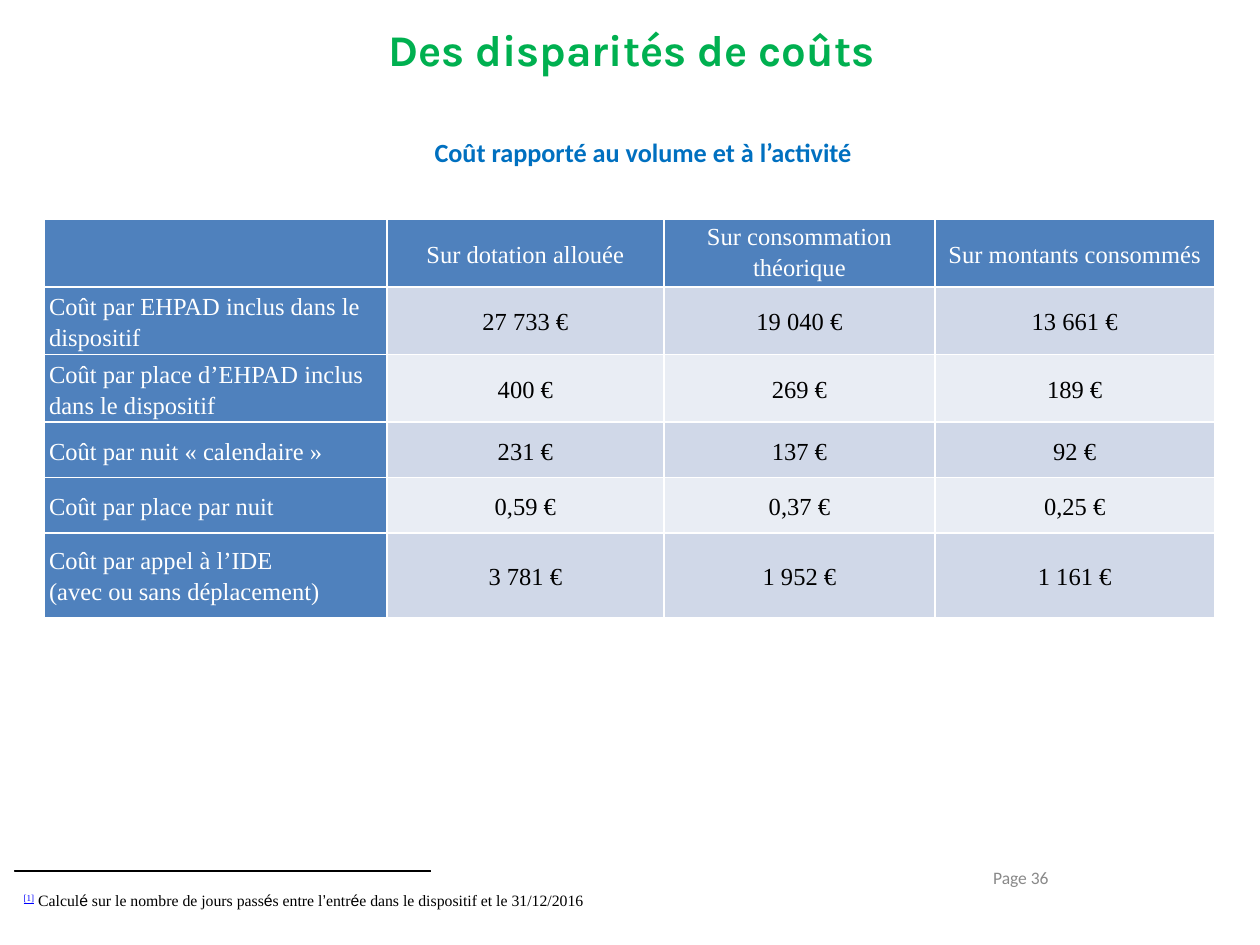
import pptx
import pptx.dml.color
import pptx.enum.shapes
import pptx.enum.text
import pptx.util

ALIGN = pptx.enum.text.PP_ALIGN
MIDDLE = pptx.enum.text.MSO_ANCHOR.MIDDLE
TOP = pptx.enum.text.MSO_ANCHOR.TOP
FIT = pptx.enum.text.MSO_AUTO_SIZE.SHAPE_TO_FIT_TEXT
COLS, ROWS = 100, 75

HEAD = ["", "Sur dotation allouée", "Sur consommation théorique", "Sur montants consommés"]
COSTS = [
    ["Coût par EHPAD inclus dans le dispositif", "27 733 €", "19 040 €", "13 661 €"],
    ["Coût par place d’EHPAD inclus dans le dispositif", "400 €", "269 €", "189 €"],
    ["Coût par nuit « calendaire »", "231 €", "137 €", "92 €"],
    ["Coût par place par nuit", "0,59 €", "0,37 €", "0,25 €"],
    ["Coût par appel à l’IDE\n(avec ou sans déplacement)", "3 781 €", "1 952 €", "1 161 €"],
]
NOTE = [" Calcul", "é", " sur le nombre de jours pass", "é", "s entre l", "’",
        "entr", "é", "e dans le dispositif et le 31/12/2016"]


def tint(code):
    return pptx.dml.color.RGBColor.from_string(code)


def apply(item, form):
    for name, value in form.items():
        setattr(item, name, value)


def style(run, color, **form):
    apply(run.font, form)
    run.font.color.rgb = tint(color)


class Page:
    """Holds the deck, its slide and the table style; lengths are grid columns and rows."""

    blue, bands, serif = "4F81BD", ("D0D8E8", "E9EDF4"), "Times New Roman"

    def __init__(self):
        self.deck = pptx.Presentation()
        apply(self.deck, {"slide_width": pptx.util.Inches(10),
                          "slide_height": pptx.util.Inches(7.5)})
        self.slide = self.deck.slides.add_slide(self.deck.slide_layouts[6])

    def wide(self, cols):
        return round(self.deck.slide_width * cols / COLS)

    def tall(self, rows):
        return round(self.deck.slide_height * rows / ROWS)

    def place(self, x, y, w, h):
        return self.wide(x), self.tall(y), self.wide(w), self.tall(h)

    def text(self, spot, words, size, color, font, align=ALIGN.LEFT, bold=False, **frame):
        box = self.slide.shapes.add_textbox(*self.place(*spot)).text_frame
        apply(box, {"word_wrap": True, **frame})
        line = box.paragraphs[0]
        line.alignment = align
        run = line.add_run()
        run.text = words
        style(run, color, size=pptx.util.Pt(size), name=font, bold=bold)

    def block(self, spot, fill, edge=None):
        rect = pptx.enum.shapes.MSO_SHAPE.RECTANGLE
        shape = self.slide.shapes.add_shape(rect, *self.place(*spot))
        shape.shadow.inherit = False
        shape.fill.solid()
        shape.fill.fore_color.rgb = tint(fill)
        if edge:
            shape.line.color.rgb = tint(edge)
            shape.line.width = pptx.util.Pt(0.75)
        else:
            shape.line.fill.background()
        return shape

    def note(self, spot, mark, parts):
        """Footnote whose accented parts alternate with serif ones."""
        frame = self.block(spot, "FFFFFF").text_frame
        apply(frame, {"word_wrap": True, "vertical_anchor": MIDDLE, "auto_size": FIT})
        line = frame.paragraphs[0]
        line.alignment = ALIGN.LEFT
        size = pptx.util.Pt(9)
        run = line.add_run()
        run.text = mark
        style(run, "0000FF", size=size, name=self.serif, underline=True)
        run.font._element.set("baseline", "30000")
        for i, part in enumerate(parts):
            run = line.add_run()
            run.text = part
            style(run, "000000", size=size, name="Arial" if i % 2 else self.serif)

    def table(self, spot, widths, heights, data):
        grid = self.slide.shapes.add_table(len(data), len(data[0]), *self.place(*spot)).table
        grid.first_col = True
        for col, width in zip(grid.columns, widths):
            col.width = self.wide(width)
        for row, height in zip(grid.rows, heights):
            row.height = self.tall(height)
        for r, line in enumerate(data):
            for c, words in enumerate(line):
                self.cell(grid.cell(r, c), words, r, c)

    def cell(self, cell, words, r, c):
        label = r == 0 or c == 0
        side = self.wide(0.4)
        apply(cell, {"margin_left": side, "margin_right": side,
                     "margin_top": 0, "margin_bottom": 0,
                     "vertical_anchor": TOP if (r, c) == (0, 2) else MIDDLE})
        cell.fill.solid()
        cell.fill.fore_color.rgb = tint(self.blue if label else self.bands[(r - 1) % 2])
        if not words:
            return
        cell.text = words
        for line in cell.text_frame.paragraphs:
            apply(line, {"alignment": ALIGN.CENTER if c else ALIGN.LEFT, "line_spacing": 1.15})
            style(line.runs[0], "FFFFFF" if label else "000000",
                  size=pptx.util.Pt(14), name=self.serif, bold=False)


def main():
    page = Page()
    page.text((5.1, 1.3, 90, 3), "Des disparités de coûts", 25, "00B050", "Karla",
              ALIGN.CENTER, True)
    page.text((33.5, 10.3, 35.5, 3.5), "Coût rapporté au volume et à l’activité", 15,
              "0070C0", "Calibri", bold=True, word_wrap=False, auto_size=FIT)
    page.table((3.5, 17.4, 92.9, 31.5), [27.2, 22, 21.5, 22.2],
               [4.2] + [4.4] * 4 + [6.7], [HEAD] + COSTS)
    page.block((1.2, 69.1, 33, 0.1), "000000", "000000")
    page.note((0.9, 70.2, 50.3, 2.5), "[1]", NOTE)
    page.text((72.8, 68.2, 11.4, 2.9), "Page 36", 10, "898989", "Calibri",
              ALIGN.RIGHT, vertical_anchor=MIDDLE)
    page.deck.save("out.pptx")


if __name__ == "__main__":
    main()
